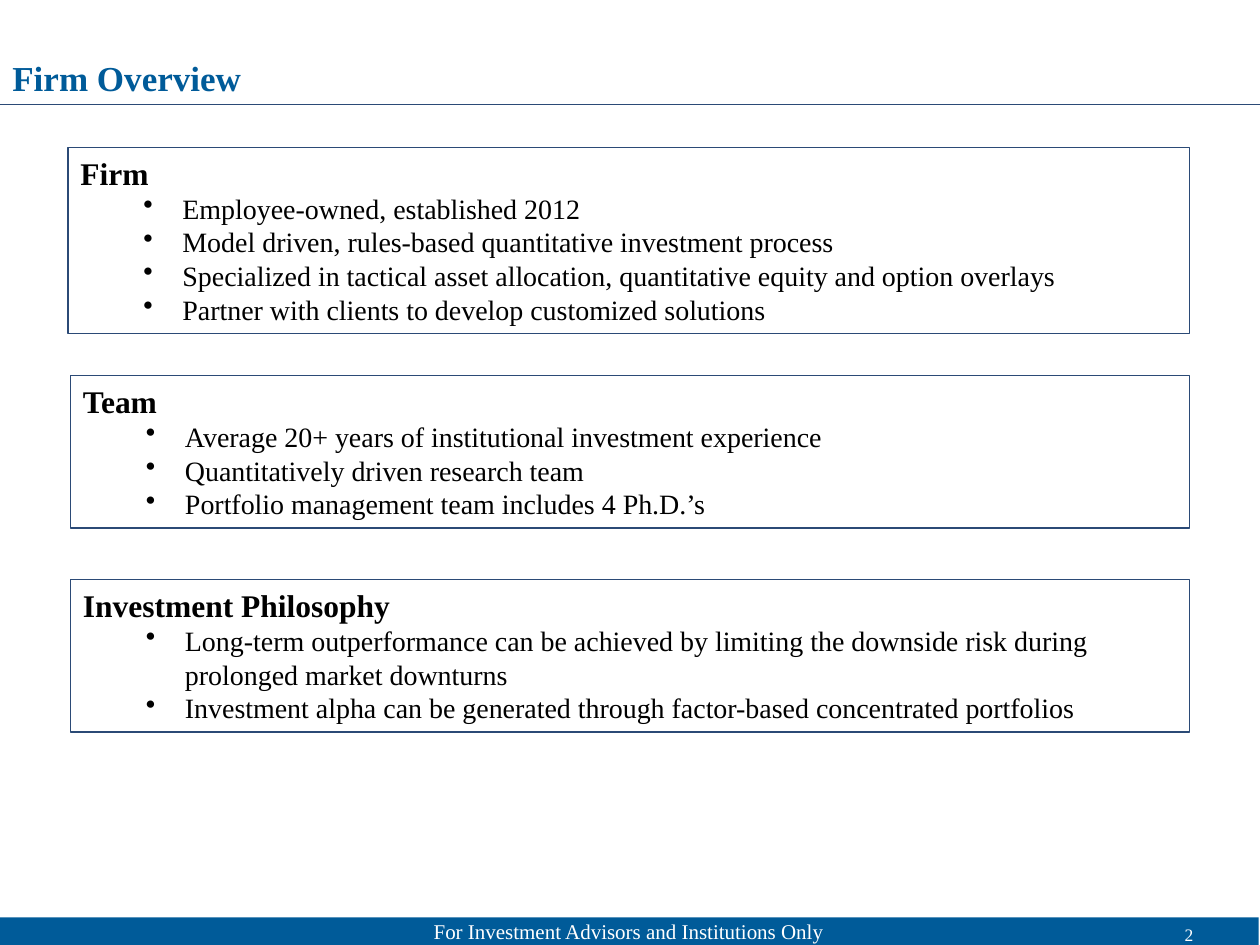
from dataclasses import dataclass

from lxml.etree import SubElement
from pptx import Presentation
from pptx.dml.color import RGBColor
from pptx.enum.shapes import MSO_CONNECTOR, MSO_SHAPE
from pptx.enum.text import MSO_ANCHOR as Anchor, MSO_AUTO_SIZE as AutoSize, PP_ALIGN as Align
from pptx.oxml.ns import qn
from pptx.util import Inches, Pt


@dataclass(frozen=True)
class Theme:
    font: str = "Times New Roman"
    brand: str = "005B99"
    rule: str = "2B4A76"
    ink: str = "000000"
    paper: str = "FFFFFF"
    title: int = 20
    heading: int = 18
    bullet: int = 16
    footer: int = 12
    page: int = 10
    line: float = 0.75


THEME = Theme()
WIDTH, HEIGHT = 10, 7.5
HEADER_HEIGHT = 0.83
BULLET_INDENT, BULLET_HANG = 0.81, 0.31

# Each panel: left, top, width, height, heading, bullets
PANELS = [
    (0.54, 1.17, 8.9, 1.48, "Firm", [
        "Employee-owned, established 2012",
        "Model driven, rules-based quantitative investment process",
        "Specialized in tactical asset allocation, quantitative equity and option overlays",
        "Partner with clients to develop customized solutions",
    ]),
    (0.56, 2.98, 8.88, 1.21, "Team", [
        "Average 20+ years of institutional investment experience",
        "Quantitatively driven research team",
        "Portfolio management team includes 4 Ph.D.’s",
    ]),
    (0.56, 4.6, 8.88, 1.21, "Investment Philosophy", [
        "Long-term outperformance can be achieved by limiting the downside risk "
        "during prolonged market downturns",
        "Investment alpha can be generated through factor-based concentrated portfolios",
    ]),
]


def rgb(color):
    return RGBColor.from_string(color)


def write(frame, text, *, size, color=THEME.ink, bold=False, align=Align.LEFT, bullet=False):
    """Fill the frame's empty first paragraph, or append a new one."""
    first = frame.paragraphs[0]
    paragraph = frame.add_paragraph() if first.runs else first
    paragraph.alignment = align
    if bullet:
        paragraph.level = 1
        properties = paragraph._p.get_or_add_pPr()
        properties.set("marL", str(Inches(BULLET_INDENT)))
        properties.set("indent", str(-Inches(BULLET_HANG)))
        SubElement(properties, qn("a:buChar")).set("char", "•")
    run = paragraph.add_run()
    run.text = text
    font = run.font
    font.name, font.size, font.bold = THEME.font, Pt(size), bold
    font.color.rgb = rgb(color)


def add_text_area(slide, box, anchor):
    frame = slide.shapes.add_textbox(*map(Inches, box)).text_frame
    frame.word_wrap = True
    frame.vertical_anchor = anchor
    return frame


def add_rectangle(slide, box, fill=None, outline=None):
    rectangle = slide.shapes.add_shape(MSO_SHAPE.RECTANGLE, *map(Inches, box))
    rectangle.shadow.inherit = False
    if fill:
        rectangle.fill.solid()
        rectangle.fill.fore_color.rgb = rgb(fill)
    else:
        rectangle.fill.background()
    if outline:
        rectangle.line.color.rgb = rgb(outline)
        rectangle.line.width = Pt(THEME.line)
    else:
        rectangle.line.fill.background()
    rectangle.text_frame.word_wrap = True
    return rectangle.text_frame


def add_header(slide, box, title):
    left, top, width, height = box
    ends = (left, top + height, left + width, top + height)
    rule = slide.shapes.add_connector(MSO_CONNECTOR.STRAIGHT, *map(Inches, ends))
    rule.line.color.rgb = rgb(THEME.rule)
    rule.line.width = Pt(THEME.line)
    SubElement(rule._element.spPr, qn("a:effectLst"))
    frame = add_text_area(slide, box, Anchor.BOTTOM)
    write(frame, title, size=THEME.title, color=THEME.brand, bold=True)


def add_footer(slide, box, notice, page):
    left, top, width, height = box
    band = add_rectangle(slide, box, fill=THEME.brand)
    band.vertical_anchor = Anchor.MIDDLE
    write(band, notice, size=THEME.footer, color=THEME.paper, align=Align.CENTER)
    page_box = (left + 0.85 * width, top - 0.03, 1.08, height + 0.11)
    number = add_text_area(slide, page_box, Anchor.MIDDLE)
    write(number, page, size=THEME.page, color=THEME.paper, align=Align.RIGHT)


def add_panel(slide, box, heading, bullets):
    frame = add_rectangle(slide, box, outline=THEME.rule)
    frame.auto_size = AutoSize.SHAPE_TO_FIT_TEXT
    frame.vertical_anchor = Anchor.TOP
    write(frame, heading, size=THEME.heading, bold=True)
    for text in bullets:
        write(frame, text, size=THEME.bullet, bullet=True)


def main():
    deck = Presentation()
    deck.slide_width, deck.slide_height = Inches(WIDTH), Inches(HEIGHT)
    slide = deck.slides.add_slide(deck.slide_layouts[6])
    add_header(slide, (0, 0, WIDTH, HEADER_HEIGHT), "Firm Overview")
    for *box, heading, bullets in PANELS:
        add_panel(slide, box, heading, bullets)
    add_footer(slide, (-0.01, 7.28, WIDTH, 0.22),
               "For Investment Advisors and Institutions Only", "2")
    deck.save("out.pptx")


if __name__ == "__main__":
    main()
